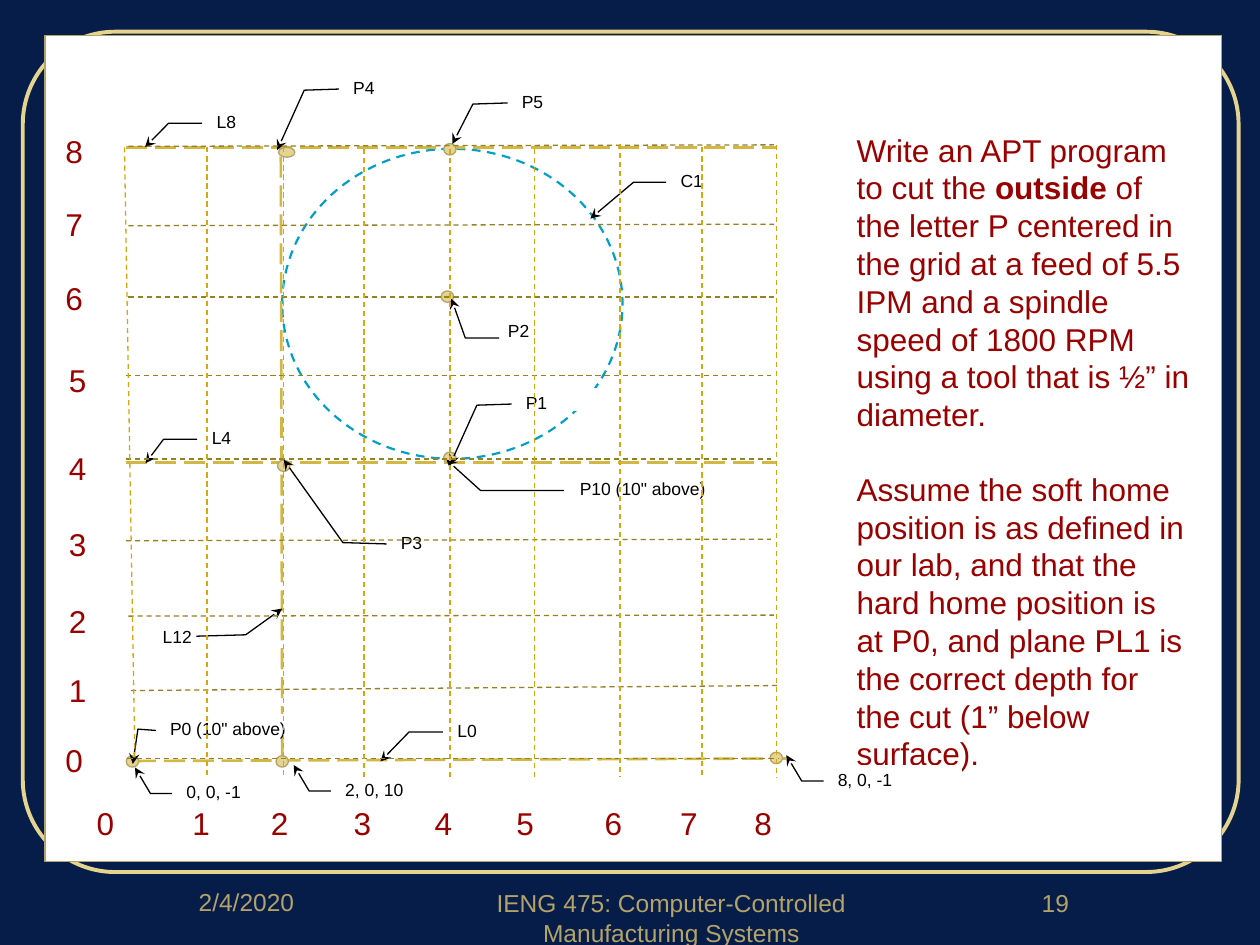
from lxml.etree import SubElement
from pptx import Presentation
from pptx.dml.color import RGBColor
from pptx.enum.dml import MSO_LINE
from pptx.enum.shapes import MSO_CONNECTOR, MSO_SHAPE
from pptx.enum.text import MSO_ANCHOR, PP_ALIGN
from pptx.oxml.ns import qn
from pptx.util import Cm, Pt

NAVY, WHITE, BLACK, RED = "071D49", "FFFFFF", "000000", "990000"
GOLD, SAND, BLUE = "B3A369", "E4D490", "00A0C6"
GUIDE, ROW, COL = "D2B745", "968024", "DAA510"

# Axis digits 0 to 8
X_TOP = 16.08
X_LEFT = [1.7, 3.63, 5.21, 6.88, 8.51, 10.16, 11.94, 13.46, 14.96]
Y_TOP = [14.81, 13.41, 12.01, 10.46, 8.92, 7.16, 5.51, 4.01, 2.54]

# Grid rows (left x, left y, right x, right y) and columns (x1, y1, x2, y2)
ROWS = [
    (2.59, 2.95, 15.6, 2.92), (2.59, 4.55, 15.6, 4.52),
    (2.59, 5.99, 15.6, 5.99), (2.54, 7.57, 15.54, 7.57),
    (2.54, 9.25, 15.54, 9.25), (2.54, 10.9, 15.54, 10.87),
    (2.59, 12.42, 15.6, 12.4), (2.64, 13.92, 15.67, 13.82),
    (2.57, 15.29, 15.7, 15.29),
]
COLS = [(2.51, 2.97, 2.72, 15.34)] + [
    (x, top, x, 15.67) for x, top in [
        (4.17, 2.97), (5.72, 2.97), (7.34, 3), (9.07, 3),
        (10.77, 3), (12.5, 2.9), (14.15, 2.97), (15.65, 2.92)]
]
# Lines L4, L8, L12 and L0
GUIDES = [
    (2.54, 9.32, 15.67, 9.32), (2.54, 2.97, 15.67, 2.97),
    (5.69, 15.24, 5.66, 2.9), (2.72, 15.34, 15.85, 15.29),
]

# Callout sizes, and leader bends as (y, x) pairs in parts of the box
SMALL, WIDE = (0.79, 0.46), (2.59, 0.46)
LOW = (0.71, -0.08, 0.71, -0.64, -0.59, -0.87)
HIGH = (0.71, -0.08, 0.76, -0.35, 3.38, -0.56)
POINT = (0.71, -0.08, 0.71, -0.25, -0.43, -0.37)
NOTES = [
    ('P10 (10" above)', 11.61, 9.55, (3, 0.48), LOW),
    ("P2", 10.16, 6.38, (1.22, 0.61), LOW),
    ("C1", 13.64, 3.35, SMALL, (0.71, -0.27, 0.71, -1.1, 2.3, -2.2)),
    ("L12", 3.2, 12.55, SMALL, (0.6, 0.96, 0.54, 2.22, -0.61, 3.15)),
    ("L8", 4.29, 2.16, SMALL, (0.71, -0.27, 0.71, -1.13, 1.76, -1.73)),
    ("L4", 4.19, 8.53, SMALL, (0.71, -0.27, 0.71, -1.13, 1.76, -1.59)),
    ("L0", 9.14, 14.43, SMALL, (0.71, -0.27, 0.71, -1.13, 2, -1.86)),
    ("P1", 10.52, 7.82, WIDE, HIGH),
    ("P4", 7.04, 1.47, WIDE, HIGH),
    ("P5", 10.44, 1.75, WIDE, (0.71, -0.08, 0.76, -0.35, 2.51, -0.51)),
    ("P3", 8, 10.64, WIDE, (0.71, -0.08, 0.65, -0.42, -2.98, -0.88)),
    ('P0 (10" above)', 3.35, 14.4, WIDE,
     (0.71, -0.08, 0.65, -0.22, 2.18, -0.26)),
    ("0, 0, -1", 3.68, 15.67, WIDE, POINT),
    ("8, 0, -1", 16.81, 15.42, WIDE, POINT),
    ("2, 0, 10", 6.88, 15.62, WIDE, POINT),
]

# Dot centres
DOTS = [(9.02, 5.98), (9.07, 3.01), (5.72, 9.39), (9.07, 9.23),
        (2.67, 15.35), (15.65, 15.28), (5.69, 15.35)]

TASK = [
    [("Write an APT program to cut the ", False), ("outside", True),
     (" of the letter P centered in the grid at a feed of 5.5 IPM and a "
      "spindle speed of 1800 RPM using a tool that is ½” in diameter.",
      False)],
    [("Assume the soft home position is as defined in our lab, and that the "
      "hard home position is at P0, and plane PL1 is the correct depth for "
      "the cut (1” below surface).", False)],
]


def rgb(code):
    return RGBColor.from_string(code)


def add_run(para, text, size, color, bold=False):
    run = para.add_run()
    run.text = text
    font = run.font
    font.name, font.size, font.bold = "Arial", Pt(size), bold
    font.color.rgb = rgb(color)


def add_text(slide, box, paras, size, color, align=PP_ALIGN.LEFT):
    frame = slide.shapes.add_textbox(*map(Cm, box)).text_frame
    frame.word_wrap = True
    for num, runs in enumerate(paras):
        para = frame.add_paragraph() if num else frame.paragraphs[0]
        para.alignment = align
        if num:
            para.space_before = Pt(21)
        for text, bold in runs:
            add_run(para, text, size, color, bold)


def add_form(slide, kind, box, fill, line, width=0.75):
    form = slide.shapes.add_shape(kind, *map(Cm, box))
    form.shadow.inherit = False
    if fill:
        form.fill.solid()
        form.fill.fore_color.rgb = rgb(fill)
    else:
        form.fill.background()
    form.line.color.rgb = rgb(line)
    form.line.width = Pt(width)
    return form


def add_line(slide, ends, color, width, dash):
    line = slide.shapes.add_connector(MSO_CONNECTOR.STRAIGHT, *map(Cm, ends))
    line.line.color.rgb = rgb(color)
    line.line.width = Pt(width)
    line.line.dash_style = dash
    SubElement(line._element.spPr, qn("a:effectLst"))


def add_note(slide, text, left, top, size, bends):
    note = add_form(slide, MSO_SHAPE.LINE_CALLOUT_2_NO_BORDER,
                    (left, top, *size), WHITE, BLACK)
    for num, bend in enumerate(bends):
        note.adjustments[num] = bend
    SubElement(note.line._get_or_add_ln(), qn("a:tailEnd"), type="stealth")
    frame = note.text_frame
    frame.word_wrap = True
    frame.vertical_anchor = MSO_ANCHOR.TOP
    frame.margin_left = frame.margin_top = Cm(0.08)
    frame.margin_right = frame.margin_bottom = 0
    frame.paragraphs[0].alignment = PP_ALIGN.LEFT
    add_run(frame.paragraphs[0], text, 10, BLACK)


def add_dot(slide, x, y, wide=0.25, high=0.23):
    box = (x - wide / 2, y - high / 2, wide, high)
    add_form(slide, MSO_SHAPE.OVAL, box, SAND, GOLD)


def main():
    deck = Presentation()
    deck.slide_width, deck.slide_height = Cm(25.4), Cm(19.05)
    slide = deck.slides.add_slide(deck.slide_layouts[6])
    slide.background.fill.solid()
    slide.background.fill.fore_color.rgb = rgb(NAVY)

    # Frame, footer and white panel
    frame = add_form(slide, MSO_SHAPE.ROUNDED_RECTANGLE,
                     (0.46, 0.64, 24.51, 16.94), None, SAND, 2.25)
    frame.adjustments[0] = 0.11
    for text, left, top, wide in [
            ("2/4/2020", 2.11, 17.75, 5.72),
            ("IENG 475: Computer-Controlled Manufacturing Systems",
             9.09, 17.78, 8.89),
            ("19", 19.05, 17.78, 4.45)]:
        add_text(slide, (left, top, wide, 1.27), [[(text, False)]], 14, GOLD,
                 PP_ALIGN.CENTER)
    add_form(slide, MSO_SHAPE.RECTANGLE, (0.91, 0.71, 23.72, 16.66),
             WHITE, GOLD)

    # Axis digits and task
    for num, (left, top) in enumerate(zip(X_LEFT, Y_TOP)):
        side = 1.14 if 1 <= num <= 5 else 1.07
        for x, y in [(side, top), (left, X_TOP)]:
            add_text(slide, (x, y, 1.6, 1.02), [[(str(num), False)]], 18, RED)
    add_text(slide, (17.02, 2.51, 7.24, 12.57), TASK, 18, RED)

    # Circle C1 and guide lines
    ring = add_form(slide, MSO_SHAPE.OVAL, (5.69, 3, 6.86, 6.25),
                    None, BLUE, 1.25)
    ring.line.dash_style = MSO_LINE.DASH
    for ends in GUIDES:
        add_line(slide, ends, GUIDE, 1.5, MSO_LINE.LONG_DASH)

    # Dots and callouts
    for x, y in DOTS:
        add_dot(slide, x, y)
    add_dot(slide, 5.78, 3.07, 0.33, 0.2)
    for note in NOTES:
        add_note(slide, *note)

    # Grid
    for group, color in [(ROWS, ROW), (COLS, COL)]:
        for ends in group:
            add_line(slide, ends, color, 0.75, MSO_LINE.DASH)

    deck.save("out.pptx")


if __name__ == "__main__":
    main()
